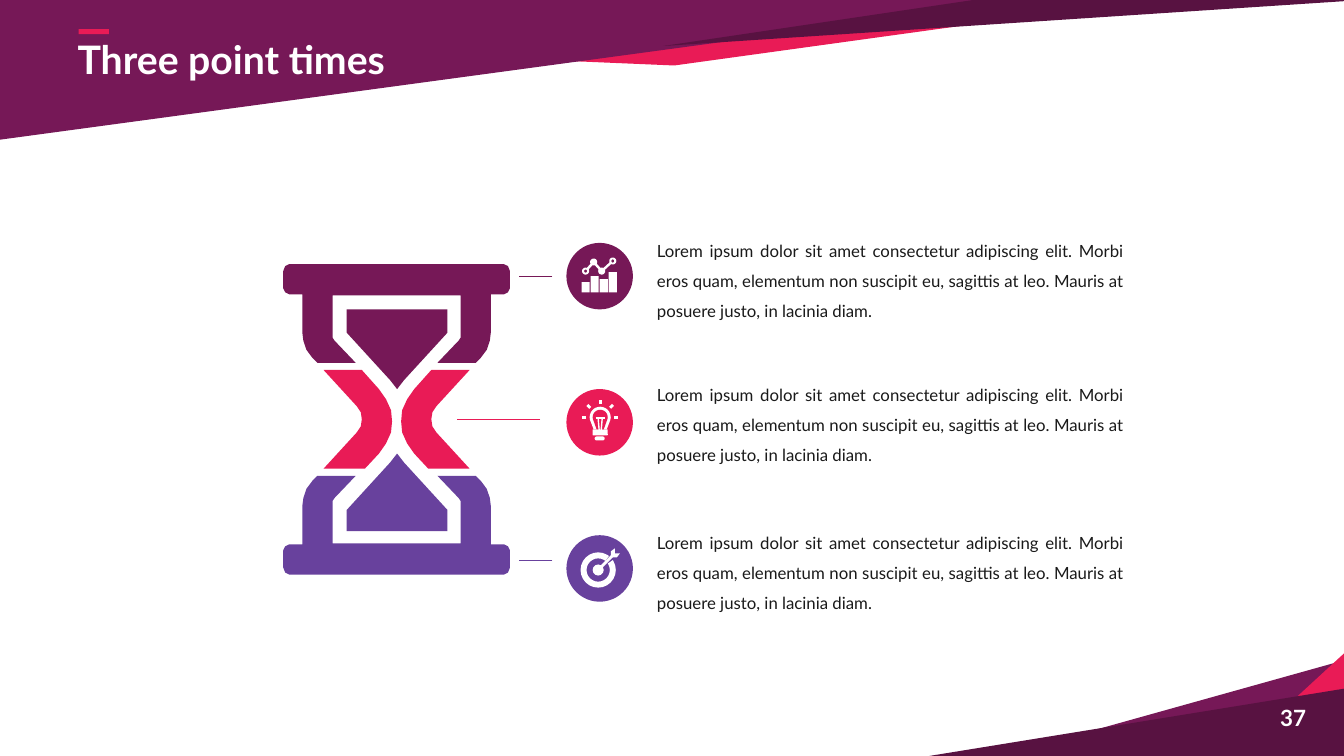
from math import atan2, cos, radians, sin
from lxml.etree import SubElement
from pptx import Presentation
from pptx.dml.color import RGBColor
from pptx.enum.shapes import MSO_CONNECTOR, MSO_SHAPE
from pptx.enum.text import MSO_ANCHOR, MSO_AUTO_SIZE, PP_ALIGN
from pptx.oxml.ns import qn
from pptx.util import Cm, Pt

PLUM, PINK, VIOLET, DARK = "761857", "E91B56", "68419D", "581241"
WHITE, INK = "FFFFFF", "1A1A1A"
GRID = 2.54  # one grid unit in cm; all places below are in grid units


def paint(target, color):
    """Fill a shape, or colour a line or font."""
    if hasattr(target, "fill"):
        target.fill.solid()
        target = target.fill.fore_color
    else:
        target = target.color
    target.rgb = RGBColor.from_string(color)


def poly(color, *rings, turn=0):
    """Draw one filled shape from closed rings of points."""
    fine = [[(x * 1000, y * 1000) for x, y in ring] for ring in rings]
    pen = shapes.build_freeform(*fine[0][0], scale=Cm(GRID) / 1000)
    for n, ring in enumerate(fine):
        if n:
            pen.move_to(*ring[0])
        pen.add_line_segments(ring[1:], close=True)
    form = pen.convert_to_shape()
    form.rotation = turn
    paint(form, color)
    form.line.fill.background()
    form.shadow.inherit = False


deck = Presentation()
deck.slide_width, deck.slide_height = Cm(33.87), Cm(19.05)
slide = deck.slides.add_slide(deck.slide_layouts[5])
shapes = slide.shapes

# Corner bands
poly(PLUM, [(13.41, 6.53), (10.44, 7.36), (13.72, 6.98)])
poly(PINK, [(14.17, 7.27), (11.6, 8.08), (13.62, 6.22), (14.49, 6.75)])
poly(DARK, [(14.28, 7.55), (9.22, 7.5), (13.35, 6.83)])
poly(PINK, [(10.6, 0.11), (4.57, 0.56), (6.69, 0.65)])
poly(PLUM, [(10.69, -0.06), (-0.03, 1.39), (-0.03, -0.08)])
poly(DARK, [(9.01, 0.47), (13.59, 0.65), (6.6, -0.2)], turn=169.3)

# Hourglass sand: base, shoulder, waist and tip heights
for base, side, waist, tip, color in [(3.07, 3.3, 3.77, 3.86, PLUM),
                                      (5.27, 5.06, 4.59, 4.5, VIOLET)]:
    half = [(3.44, base), (3.44, side), (3.87, waist), (3.94, tip)]
    poly(color, half + [(7.88 - x, y) for x, y in half[-2::-1]])

# Hourglass frame: left half, mirrored across and then down
half = [(2.87, 2.62), (2.83, 2.64), (2.81, 2.69), (2.81, 2.86), (2.83, 2.9),
        (2.87, 2.92), (3, 2.92), (3, 3.3), (3.01, 3.38), (3.04, 3.47),
        (3.1, 3.55), (3.15, 3.6), (3.53, 3.6), (3.32, 3.38), (3.3, 3.35),
        (3.3, 3.31), (3.3, 2.93)]
frame = half + [(7.87 - x, y) for x, y in reversed(half)]
poly(PLUM, frame)
poly(VIOLET, [(x, 8.32 - y) for x, y in frame])

# Hourglass neck
neck = [(3.21, 3.67), (3.54, 4.03), (3.58, 4.09), (3.59, 4.16), (3.58, 4.23),
        (3.54, 4.29), (3.21, 4.65), (3.62, 4.65), (3.76, 4.5), (3.83, 4.4),
        (3.88, 4.29), (3.89, 4.18), (3.88, 4.07), (3.83, 3.96), (3.76, 3.86),
        (3.59, 3.67)]
poly(PINK, neck)
poly(PINK, [(7.87 - x, y) for x, y in neck])

# Preset shapes: kind, left, top, width, height, colour, adjustments
OVAL, BOX, ROUND = MSO_SHAPE.OVAL, MSO_SHAPE.RECTANGLE, MSO_SHAPE.ROUNDED_RECTANGLE
parts = [(OVAL, 5.62, 2.41 + 1.45 * n, 0.66, 0.66, color, [])
         for n, color in enumerate([PLUM, PINK, VIOLET])]
parts += [
    (ROUND, 5.88, 4.26, 0.15, 0.06, WHITE, [0.1]),
    (ROUND, 5.9, 4.33, 0.1, 0.04, WHITE, [0.5]),
    (MSO_SHAPE.BLOCK_ARC, 5.76, 5.48, 0.35, 0.35, WHITE, [195.6, 184.8, 0.17]),
    (OVAL, 5.88, 5.6, 0.11, 0.11, WHITE, []),
    (BOX, 0.78, 0.29, 0.3, 0.05, PINK, []),
]
for kind, x, y, w, h, color, tweaks in parts:
    part = shapes.add_shape(kind, *[Cm(GRID * v) for v in (x, y, w, h)])
    for n, tweak in enumerate(tweaks):
        part.adjustments[n] = tweak
    paint(part, color)
    part.line.fill.background()
    part.shadow.inherit = False

# Chart icon: bars, trend dots (the end ones hollow) and links
icon = []
for n, top in enumerate([2.8, 2.74, 2.77, 2.7]):
    x = 5.77 + 0.09 * n
    icon.append([(x, top), (x + 0.08, top), (x + 0.08, 2.9), (x, 2.9)])
trend = [(5.81, 2.69), (5.89, 2.6), (5.97, 2.69), (6.08, 2.59)]
for n, (x, y) in enumerate(trend):
    for r in (0.035, 0.015) if n in (0, 3) else (0.035,):
        icon.append([(x + r * cos(radians(a)), y + r * sin(radians(a)))
                     for a in range(0, 360, 20)])
for (x, y), (to_x, to_y) in zip(trend, trend[1:]):
    lean = atan2(to_y - y, to_x - x)
    c, s = cos(lean), sin(lean)
    ends = [(x + 0.035 * c, y + 0.035 * s), (to_x - 0.035 * c, to_y - 0.035 * s)]
    icon.append([(x - 0.012 * s, y + 0.012 * c) for x, y in ends]
                + [(x + 0.012 * s, y - 0.012 * c) for x, y in reversed(ends)])
poly(WHITE, *icon)

# Bulb glass: white outline around a pink core
for r, foot, color in [(0.105, 0.065, WHITE), (0.075, 0.035, PINK)]:
    arc = [(5.955 + r * cos(radians(a)), 4.14 + r * sin(radians(a)))
           for a in range(150, 391, 15)]
    poly(color, arc + [(5.955 + foot, 4.26), (5.955 - foot, 4.26)])

# Dart flight
poly(WHITE, [(6.06, 5.47), (6.1, 5.44), (6.1, 5.49), (6.15, 5.49), (6.12, 5.53),
             (6.06, 5.53)])

# Lines: start, end, colour, weight
lines = [(5.36, 4.16, 4.53, 4.16, PINK, 0.5),
         (5.48, 2.74, 5.15, 2.74, PLUM, 0.5),
         (5.48, 5.56, 5.15, 5.56, VIOLET, 0.5),
         (5.91, 4.15, 6, 4.15, WHITE, 1.5),
         (5.935, 4.15, 5.945, 4.27, WHITE, 1),
         (5.975, 4.15, 5.965, 4.27, WHITE, 1),
         (5.95, 5.64, 6.09, 5.5, WHITE, 2)]
for angle in range(180, 361, 45):
    c, s = cos(radians(angle)), sin(radians(angle))
    lines.append((5.955 + 0.14 * c, 4.145 + 0.14 * s,
                  5.955 + 0.18 * c, 4.145 + 0.18 * s, WHITE, 2))
for x, y, to_x, to_y, color, weight in lines:
    line = shapes.add_connector(MSO_CONNECTOR.STRAIGHT,
                                *[Cm(GRID * v) for v in (x, y, to_x, to_y)])
    paint(line.line, color)
    line.line.width = Pt(weight)
    SubElement(line.element.spPr, qn("a:effectLst"))

# Title, brought in front of the bands
title = shapes.title
title.element.getparent().append(title.element)
words = ("Lorem ipsum dolor sit amet consectetur adipiscing elit. Morbi eros quam, "
         "elementum non suscipit eu, sagittis at leo. Mauris at posuere justo, "
         "in lacinia diam.")

# Texts: box, place, wording, size, colour, bold, alignment, line spacing
texts = [(title, 0.67, 0.3, 4.98, 0.57, "Three point times", 28, WHITE, True,
          PP_ALIGN.LEFT, 1),
         (None, 12.59, 6.94, 0.48, 0.37, "37", 16, WHITE, True, PP_ALIGN.CENTER, 1)]
texts += [(None, 6.42, top, 4.83, 1.01, words, 12, INK, False, PP_ALIGN.JUSTIFY, 1.5)
          for top in (2.235, 3.665, 5.135)]
for box, x, y, w, h, text, size, color, bold, align, gap in texts:
    place = [Cm(GRID * v) for v in (x, y, w, h)]
    box = box or shapes.add_textbox(*place)
    box.left, box.top, box.width, box.height = place
    body = box.text_frame
    body.text = text
    body.word_wrap = text != "37"
    body.auto_size = MSO_AUTO_SIZE.NONE
    body.vertical_anchor = MSO_ANCHOR.TOP
    para = body.paragraphs[0]
    para.alignment, para.line_spacing = align, gap
    font = para.runs[0].font
    font.name, font.size, font.bold = "Lato", Pt(size), bold
    paint(font, color)

deck.save("out.pptx")
